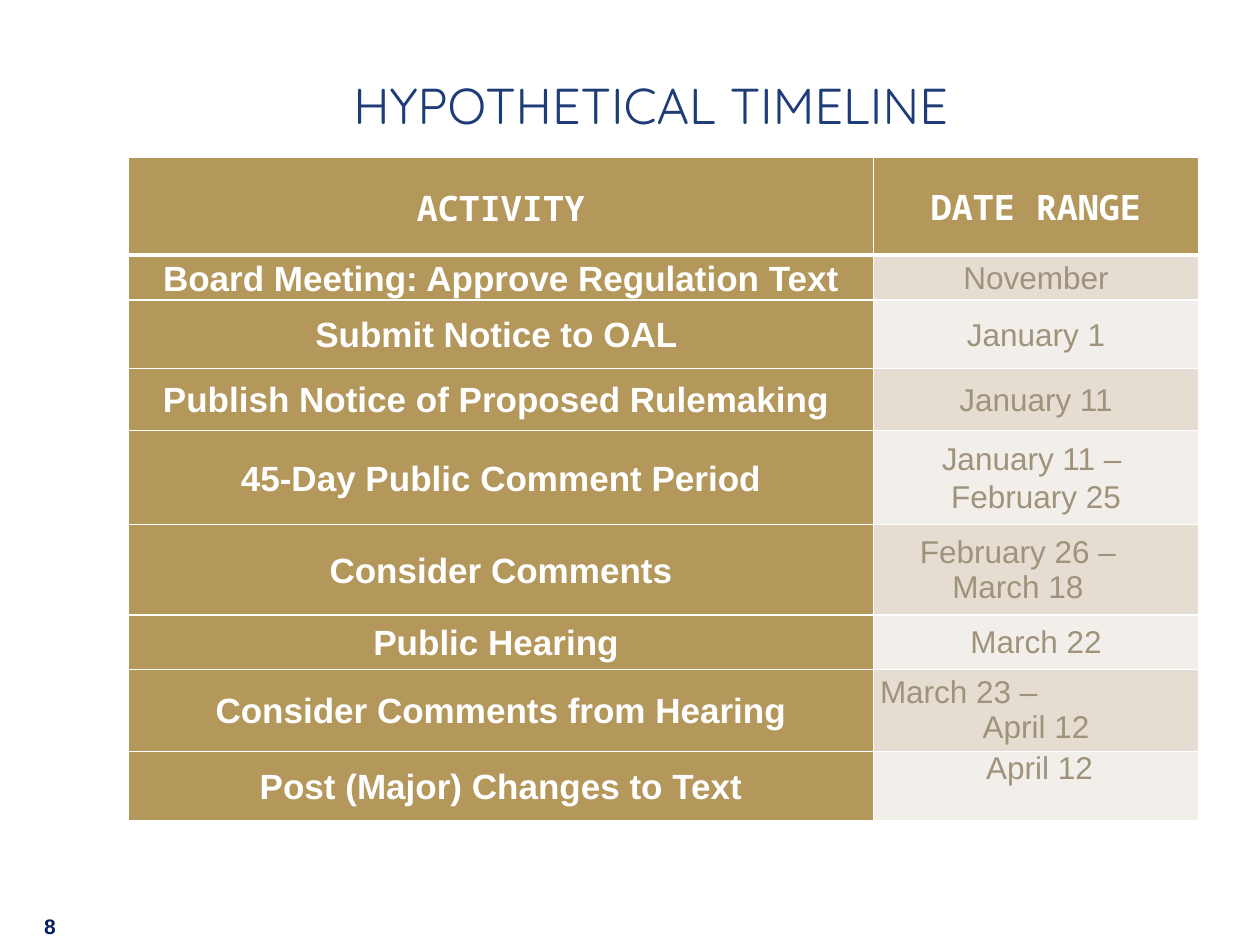
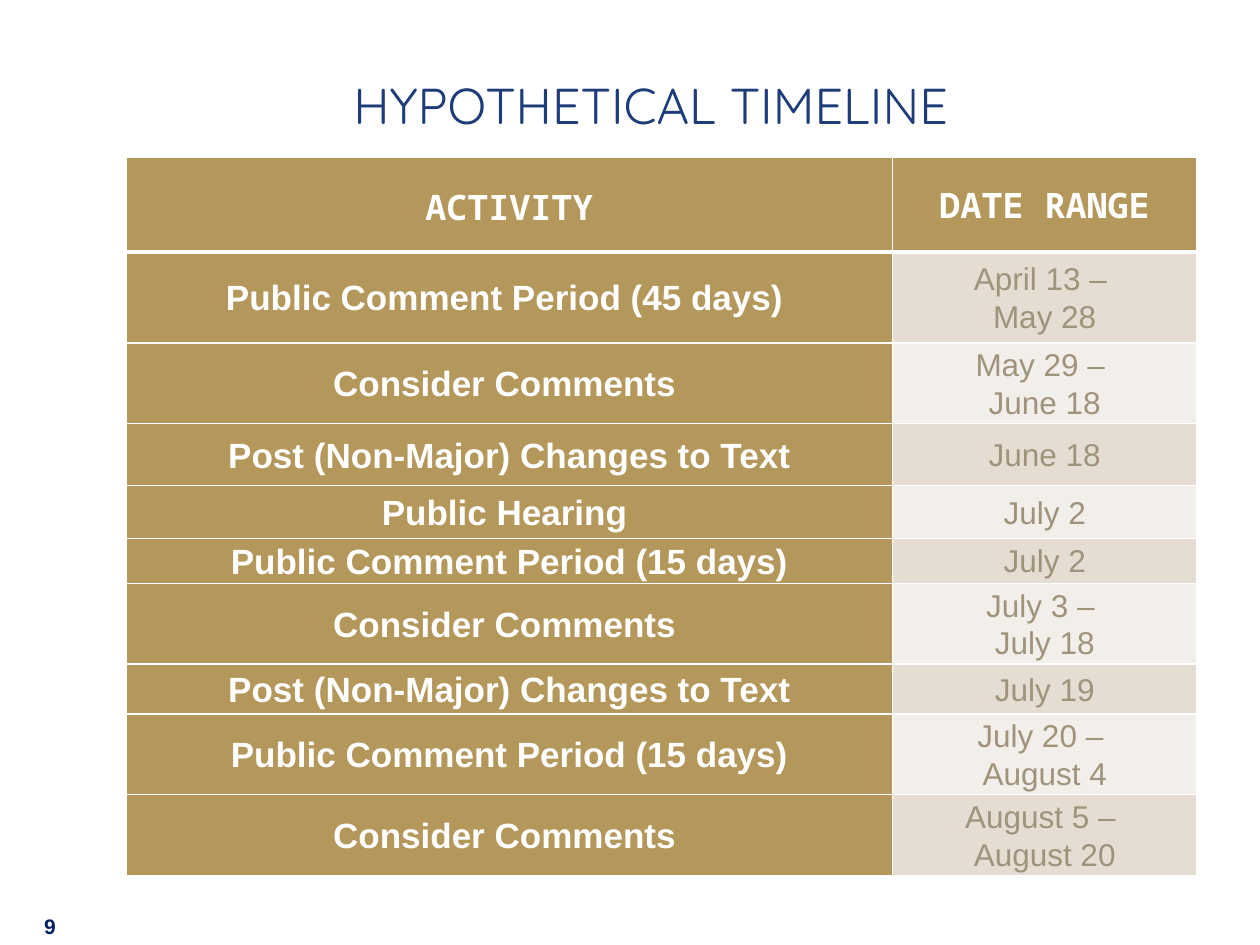
from pptx import Presentation
from pptx.dml.color import RGBColor
from pptx.enum.text import MSO_ANCHOR, PP_ALIGN
from pptx.oxml.ns import qn
from pptx.util import Cm, Pt
from lxml.etree import SubElement

WHITE = RGBColor(0xFF, 0xFF, 0xFF)
GOLD = RGBColor(0xB4, 0x97, 0x5A)
SAND = RGBColor(0xE5, 0xDD, 0xD2)
CREAM = RGBColor(0xF2, 0xEF, 0xEA)
TAUPE = RGBColor(0xA0, 0x93, 0x7C)
BLUE = RGBColor(0x1E, 0x3C, 0x78)
NAVY = RGBColor(0x00, 0x20, 0x60)

MID, TOP, LOW = MSO_ANCHOR.MIDDLE, MSO_ANCHOR.TOP, MSO_ANCHOR.BOTTOM
LEFT, MIDST = PP_ALIGN.LEFT, PP_ALIGN.CENTER

TITLE = {"name": "Quicksand", "size": Pt(36)}
PAGE = {"name": "Arial", "size": Pt(12), "bold": True}
HEAD = {"name": "Noto Sans Mono", "size": Pt(20), "bold": True}
TASK = {"name": "Arial", "size": Pt(20), "bold": True}
DATE = {"name": "Arial", "size": Pt(18), "bold": False}
INSET = {"margin_left": Cm(0.13), "margin_right": Cm(0.13),
         "margin_top": 0, "margin_bottom": 0}


def apply(item, style):
    for key, value in style.items():
        setattr(item, key, value)


class Deck:
    def __init__(self):
        self.file = Presentation()
        self.file.slide_width = Cm(25.4)
        self.file.slide_height = Cm(19.05)

    def add(self):
        self.slide = self.file.slides.add_slide(self.file.slide_layouts[6])

    def text(self, frame, lines, style, color, align=MIDST, gap=1.0):
        for i, line in enumerate(lines):
            para = frame.paragraphs[0] if i == 0 else frame.add_paragraph()
            run = para.add_run()
            run.text = line
            apply(para, {"alignment": align, "line_spacing": gap})
            apply(run.font, style)
            run.font.color.rgb = color
        return frame.paragraphs[0]

    def box(self, place, anchor):
        frame = self.slide.shapes.add_textbox(*map(Cm, place)).text_frame
        apply(frame, {"word_wrap": True, "vertical_anchor": anchor})
        return frame

    def title(self, text):
        frame = self.box((0, 0.84, 25.4, 2.34), MID)
        apply(frame, {"margin_top": 0, "margin_bottom": 0})
        para = self.text(frame, [text], TITLE, BLUE)
        para._p.get_or_add_pPr().set("marL", str(Cm(1.11)))
        para.runs[0]._r.get_or_add_rPr().set("cap", "small")

    def page(self, number):
        frame = self.box((0.64, 17.78, 4.24, 1.27), LOW)
        para = self.text(frame, [str(number)], PAGE, NAVY, LEFT)
        para.runs[0]._r.get_or_add_rPr().set("spc", "80")

    def cell(self, cell, fill, row):
        widths = {"L": 1, "R": 1, "T": 3 if row == 1 else 1,
                  "B": 3 if row == 0 else 1}
        for side, width in widths.items():
            line = SubElement(cell._tc.get_or_add_tcPr(), qn("a:ln" + side),
                              w=str(Pt(width)))
            solid = SubElement(line, qn("a:solidFill"))
            SubElement(solid, qn("a:srgbClr"), val=str(WHITE))
        cell.fill.solid()
        cell.fill.fore_color.rgb = fill
        apply(cell, {**INSET, "vertical_anchor": MID})
        return cell.text_frame

    def table(self, left, widths, head, rows):
        highs = [head] + [row[2] for row in rows]
        place = map(Cm, (left, 3.18, sum(widths), sum(highs)))
        grid = self.slide.shapes.add_table(len(highs), 2, *place).table
        grid.horz_banding = False
        for col, width in zip(grid.columns, widths):
            col.width = Cm(width)
        for row, high in zip(grid.rows, highs):
            row.height = Cm(high)
        for col, (text, gap) in enumerate((("ACTIVITY", 1.07), ("DATE RANGE", 1.0))):
            frame = self.cell(grid.cell(0, col), GOLD, 0)
            self.text(frame, [text], HEAD, WHITE, gap=gap)
        for i, (task, dates, _, *more) in enumerate(rows, 1):
            frame = self.cell(grid.cell(i, 0), GOLD, i)
            self.text(frame, [task], TASK, WHITE, gap=1.07)
            form = more[0] if more else {}
            cell = grid.cell(i, 1)
            frame = self.cell(cell, SAND if i % 2 else CREAM, i)
            first = self.text(frame, dates, DATE, TAUPE, gap=form.get("gap", 1.07))
            first.alignment = form.get("align", MIDST)
            if "pad" in form:
                first._p.get_or_add_pPr().set("marR", str(Cm(form["pad"])))
            cell.vertical_anchor = form.get("anchor", MID)


SPRING = [
    ("Board Meeting: Approve Regulation Text", ["November"], 0.84),
    ("Submit Notice to OAL ", ["January 1"], 1.38),
    ("Publish Notice of Proposed Rulemaking ", ["January 11"], 1.25),
    ("45-Day Public Comment Period", ["January 11 – ", "February 25"], 1.9),
    ("Consider Comments", ["February 26 –", "March 18"], 1.82,
     {"gap": 1.0, "pad": 0.73}),
    ("Public Hearing ", ["March 22"], 1.1, {"gap": 1.0}),
    ("Consider Comments from Hearing", ["March 23 –", "April 12"], 1.65,
     {"gap": 1.0, "align": LEFT}),
    ("Post (Major) Changes to Text", [" April 12"], 1.4,
     {"gap": 1.0, "anchor": TOP}),
]
SUMMER = [
    ("Public Comment Period (45 days) ", ["April 13 – ", "May 28"], 1.83),
    ("Consider Comments ", ["May 29 – ", "June 18"], 1.52),
    ("Post (Non-Major) Changes to Text", ["June 18"], 1.25),
    ("Public Hearing ", ["July 2"], 1.06),
    ("Public Comment Period (15 days)", ["July 2"], 0.84),
    ("Consider Comments ", ["July 3 – ", "July 18"], 1.52),
    ("Post (Non-Major) Changes to Text", ["July 19"], 1),
    ("Public Comment Period (15 days)", ["July 20 – ", "August 4"], 1.52),
    ("Consider Comments ", ["August 5 – ", "August 20"], 1.52),
]


def main():
    deck = Deck()
    plans = [(2.59, (15.02, 6.55), 1.96, SPRING),
             (2.55, (15.44, 6.14), 1.9, SUMMER)]
    for number, plan in enumerate(plans, 8):
        deck.add()
        deck.title("hypothetical timeline ")
        deck.page(number)
        deck.table(*plan)
    deck.file.save("out.pptx")


if __name__ == "__main__":
    main()
